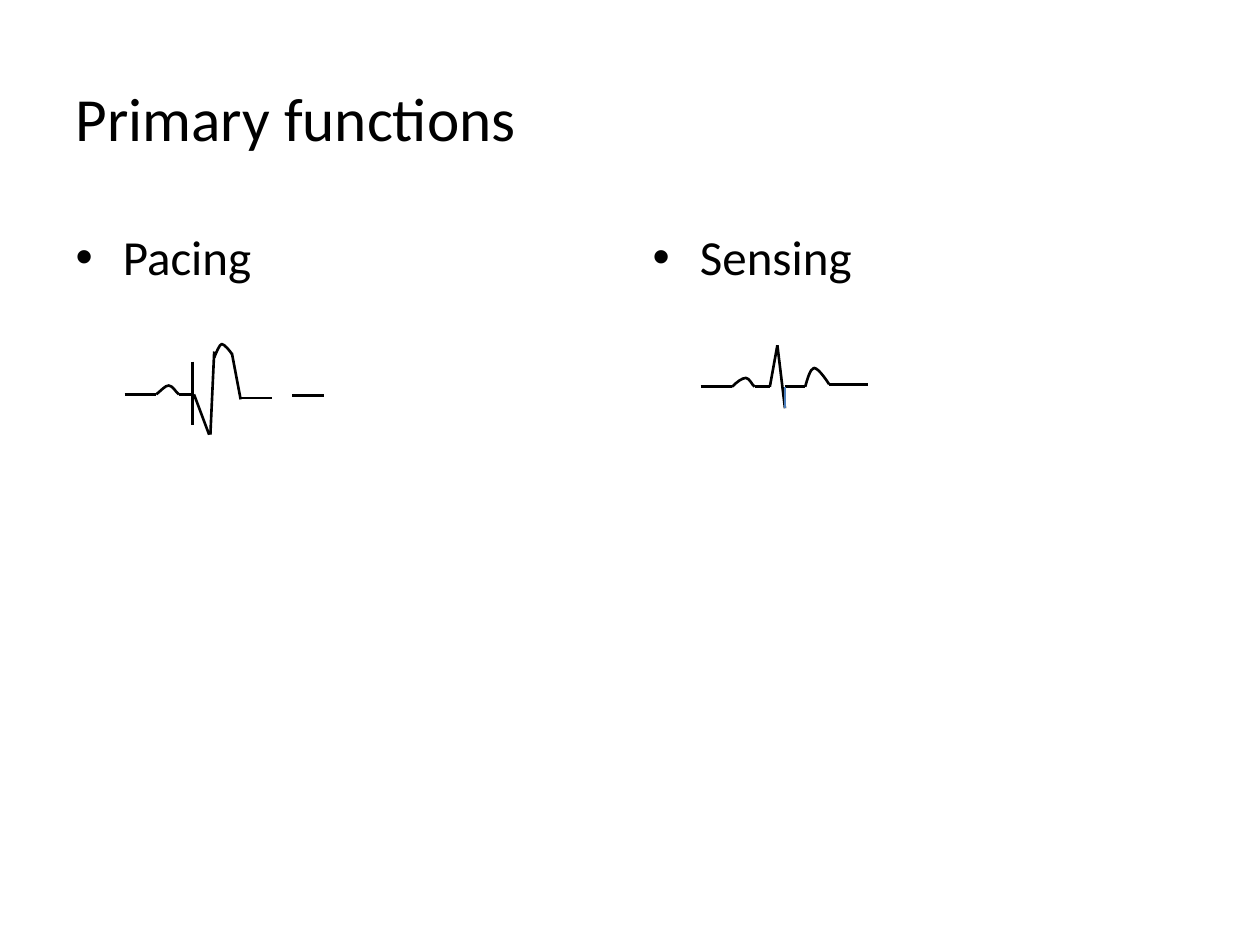
import pptx
import pptx.dml.color
import pptx.enum.shapes
import pptx.enum.text
import pptx.util
from pptx.oxml.ns import qn
from pptx.util import Inches
import lxml.etree

TITLE = "Primary functions"
FONT = "Calibri"
BLACK = "000000"
BLUE = "4B7EBC"
COLUMNS = [("Pacing", 0.5), ("Sensing", 5.08)]

# Straight strokes: start x, start y, end x, end y
PACED_LINES = [
    (0.99, 3.13, 1.24, 3.13),
    (1.42, 3.13, 1.53, 3.13),
    (1.54, 3.13, 1.66, 3.45),
    (1.7, 2.79, 1.67, 3.45),
    (1.91, 3.17, 1.84, 2.8),
    (1.91, 3.16, 2.16, 3.16),
    (2.32, 3.14, 2.57, 3.14),
]
PACING_SPIKE = (1.53, 2.87, 1.53, 3.37)
SENSED_LINES = [
    (5.56, 3.07, 5.81, 3.07),
    (5.99, 3.07, 6.11, 3.07),
    (6.11, 3.07, 6.17, 2.74),
    (6.17, 2.74, 6.23, 3.24),
    (6.23, 3.07, 6.39, 3.07),
    (6.58, 3.05, 6.89, 3.05),
]
SENSED_RETURN = (6.23, 3.24, 6.23, 3.07)

# Waves: a start point, then three points for each Bezier segment
WAVES = [
    [(1.24, 3.13), (1.28, 3.1), (1.31, 3.06), (1.34, 3.06),
     (1.37, 3.06), (1.4, 3.12), (1.42, 3.13)],
    [(1.7, 2.84), (1.72, 2.79), (1.74, 2.74), (1.76, 2.73),
     (1.78, 2.73), (1.83, 2.79), (1.84, 2.81)],
    [(5.81, 3.07), (5.85, 3.03), (5.89, 3), (5.92, 3),
     (5.95, 3), (5.97, 3.06), (5.99, 3.07)],
    [(6.39, 3.07), (6.41, 3), (6.43, 2.93), (6.46, 2.92),
     (6.5, 2.92), (6.58, 3.05), (6.58, 3.05)],
]


def rgb(color):
    return pptx.dml.color.RGBColor.from_string(color)


def fill_placeholder(shape, text, size, left, top, width, height):
    shape.left, shape.top = Inches(left), Inches(top)
    shape.width, shape.height = Inches(width), Inches(height)
    shape.text_frame.text = text
    paragraph = shape.text_frame.paragraphs[0]
    paragraph.alignment = pptx.enum.text.PP_ALIGN.LEFT
    font = paragraph.runs[0].font
    font.name = FONT
    font.size = pptx.util.Pt(size)
    font.color.rgb = rgb(BLACK)


def style_line(line, color, width):
    line.color.rgb = rgb(color)
    line.width = pptx.util.Pt(width)


def add_stroke(slide, points, color=BLACK, width=1.5):
    connector = slide.shapes.add_connector(
        pptx.enum.shapes.MSO_CONNECTOR.STRAIGHT, *map(Inches, points))
    style_line(connector.line, color, width)
    lxml.etree.SubElement(connector._element.spPr, qn("a:effectLst"))


def add_wave(slide, points):
    """Draw an open curve by grouping its vertices into cubic segments."""
    vertices = [(Inches(x), Inches(y)) for x, y in points]
    builder = slide.shapes.build_freeform(*vertices[0])
    builder.add_line_segments(vertices[1:], close=False)
    shape = builder.convert_to_shape()
    shape.shadow.inherit = False
    shape.fill.background()
    style_line(shape.line, BLACK, 1.5)
    segments = list(shape._element.iter(qn("a:lnTo")))
    for first in range(0, len(segments), 3):
        group = segments[first:first + 3]
        curve = lxml.etree.Element(qn("a:cubicBezTo"))
        group[0].addprevious(curve)
        for segment in group:
            curve.append(segment[0])
            segment.getparent().remove(segment)


def main():
    presentation = pptx.Presentation()
    presentation.slide_width = Inches(10)
    presentation.slide_height = Inches(7.5)
    slide = presentation.slides.add_slide(
        presentation.slide_layouts.get_by_name("Two Content"))

    title, *bodies = list(slide.placeholders)[:3]
    fill_placeholder(title, TITLE, 35, 0.5, 0.3, 9, 1.25)
    for body, (text, left) in zip(bodies, COLUMNS):
        fill_placeholder(body, text, 28, left, 1.75, 4.42, 4.95)

    for points in PACED_LINES + [PACING_SPIKE] + SENSED_LINES:
        add_stroke(slide, points)
    add_stroke(slide, SENSED_RETURN, BLUE, 0.75)
    for points in WAVES:
        add_wave(slide, points)

    presentation.save("out.pptx")


if __name__ == "__main__":
    main()
